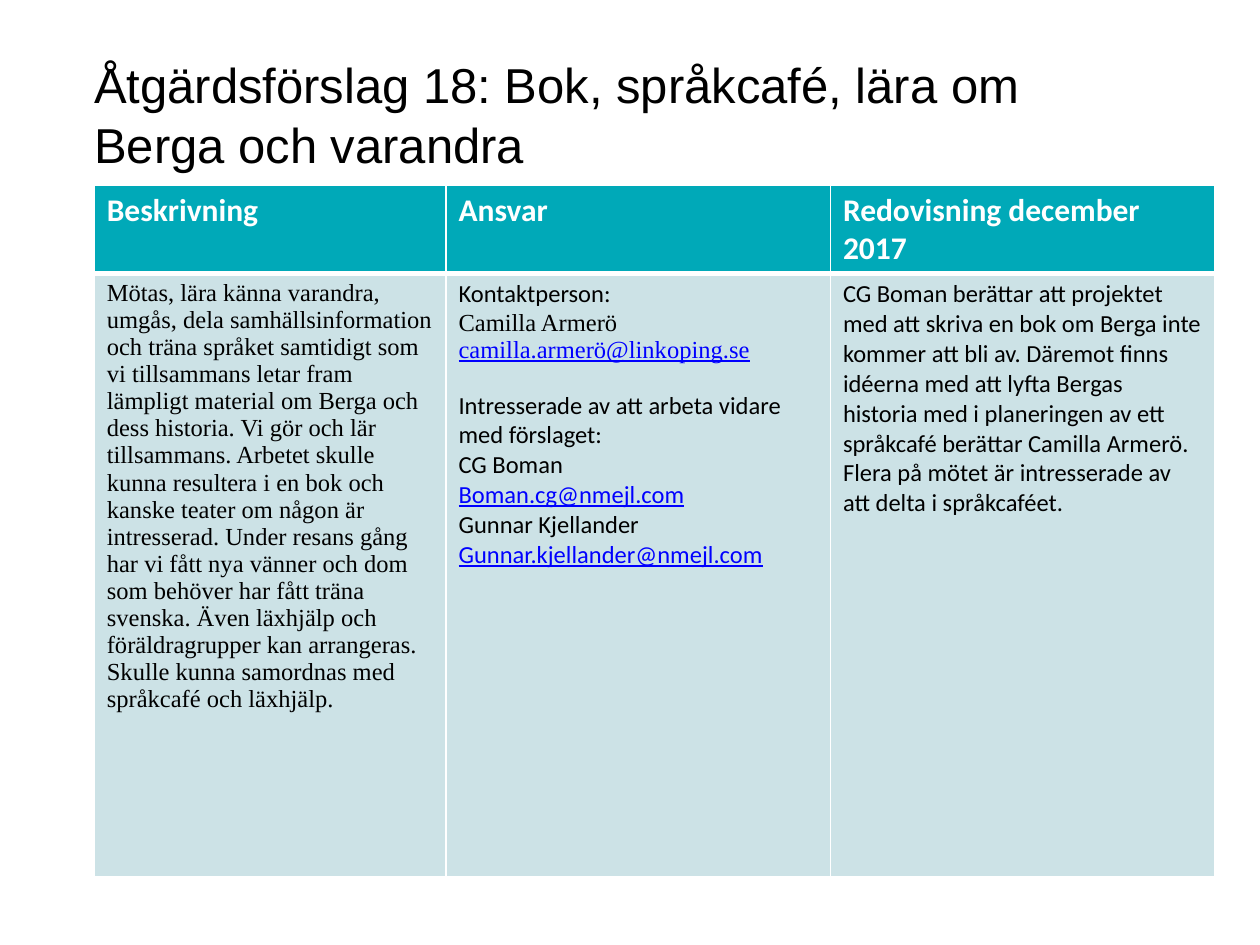
from lxml import etree
from pptx import Presentation
from pptx import util as u
from pptx.dml.color import RGBColor
from pptx.enum import text
from pptx.oxml import ns

COLORS = {"black": "000000", "white": "FFFFFF", "header": "00A9B8",
          "body": "CCE2E6", "link": "0000FF"}
SERIF = "Times New Roman"
LINK = {"color": "link", "underline": True}

HEADERS = ["Beskrivning", "Ansvar", "Redovisning december 2017"]
DESCRIPTION = [
    "Mötas, lära känna varandra, umgås, dela samhällsinformation och träna "
    "språket samtidigt som vi tillsammans letar fram lämpligt material om Berga "
    "och dess historia. Vi gör och lär tillsammans. Arbetet skulle kunna resultera "
    "i en bok och kanske teater om någon är intresserad. Under resans gång har vi "
    "fått nya vänner och dom som behöver har fått träna svenska. Även läxhjälp och "
    "föräldragrupper kan arrangeras.",
    "Skulle kunna samordnas med språkcafé och läxhjälp.",
]
REPORT = (
    "CG Boman berättar att projektet med att skriva en bok om Berga inte kommer "
    "att bli av. Däremot finns idéerna med att lyfta Bergas historia med i "
    "planeringen av ett språkcafé berättar Camilla Armerö. Flera på mötet är "
    "intresserade av att delta i språkcaféet."
)
CONTACTS = [
    [("Kontaktperson:", {})],
    [("Camilla Armerö ", {"font": SERIF}),
     ("camilla.armerö@linkoping.se", {"font": SERIF, **LINK})],
    [("Intresserade av att arbeta vidare med förslaget:", {"before": 15.5})],
    [("CG Boman", {})],
    [("Boman.cg@nmejl.com", LINK)],
    [("Gunnar Kjellander", {})],
    [("Gunnar.kjellander@nmejl.com", LINK)],
]
BODY = [
    [[(line, {"font": SERIF})] for line in DESCRIPTION],
    CONTACTS,
    [[(REPORT, {})]],
]


def add_text(p, content, size=14, font="Calibri", color="black", bold=False,
             underline=False, before=None, spacing=None):
    r = p.add_run()
    r.text = content
    r.font.size = u.Pt(size)
    r.font.name = font
    r.font.bold = bold
    r.font.underline = underline
    r.font.color.rgb = RGBColor.from_string(COLORS[color])
    if before is not None:
        p.space_before = u.Pt(before)
    if spacing is not None:
        p.line_spacing = u.Pt(spacing)


def add_title(s, content):
    sp = s.shapes.add_textbox(u.Cm(1.9), u.Cm(1.07), u.Cm(21.5), u.Cm(2.44))
    tf = sp.text_frame
    tf.word_wrap = True
    tf.vertical_anchor = text.MSO_ANCHOR.MIDDLE
    tf.margin_left = tf.margin_right = tf.margin_top = tf.margin_bottom = 0
    add_text(tf.paragraphs[0], content, size=28, font="Arial", spacing=34)


def set_borders(cell, bottom=1):
    props = cell._tc.get_or_add_tcPr()
    widths = {"lnL": 1, "lnR": 1, "lnT": 1, "lnB": bottom}
    for i, (tag, width) in enumerate(widths.items()):
        line = etree.Element(ns.qn(f"a:{tag}"), w=str(u.Pt(width)))
        fill = etree.SubElement(line, ns.qn("a:solidFill"))
        etree.SubElement(fill, ns.qn("a:srgbClr"), val=COLORS["white"])
        props.insert(i, line)


def fill_cell(cell, paragraphs, fill, bottom=1):
    cell.fill.solid()
    cell.fill.fore_color.rgb = RGBColor.from_string(COLORS[fill])
    set_borders(cell, bottom)
    tf = cell.text_frame
    for i, runs in enumerate(paragraphs):
        p = tf.paragraphs[0] if i == 0 else tf.add_paragraph()
        for content, style in runs:
            add_text(p, content, **style)


def add_plan_table(s):
    table = s.shapes.add_table(2, 3, u.Cm(1.9), u.Cm(3.73),
                               u.Cm(22.59), u.Cm(13.95)).table
    for column, width in zip(table.columns, (7.09, 7.75, 7.75)):
        column.width = u.Cm(width)
    for row, height in zip(table.rows, (1.78, 12.17)):
        row.height = u.Cm(height)
    for i, (header, body) in enumerate(zip(HEADERS, BODY)):
        style = {"size": 18, "color": "white", "bold": True}
        fill_cell(table.cell(0, i), [[(header, style)]], "header", bottom=3)
        fill_cell(table.cell(1, i), body, "body")
        set_top = table.cell(1, i)._tc.tcPr.find(ns.qn("a:lnT"))
        set_top.set("w", str(u.Pt(3)))


def main():
    prs = Presentation()
    prs.slide_width, prs.slide_height = u.Cm(25.4), u.Cm(19.05)
    s = prs.slides.add_slide(prs.slide_layouts[6])
    add_title(s, "Åtgärdsförslag 18: Bok, språkcafé, lära om Berga och varandra")
    add_plan_table(s)
    prs.save("out.pptx")


if __name__ == "__main__":
    main()
